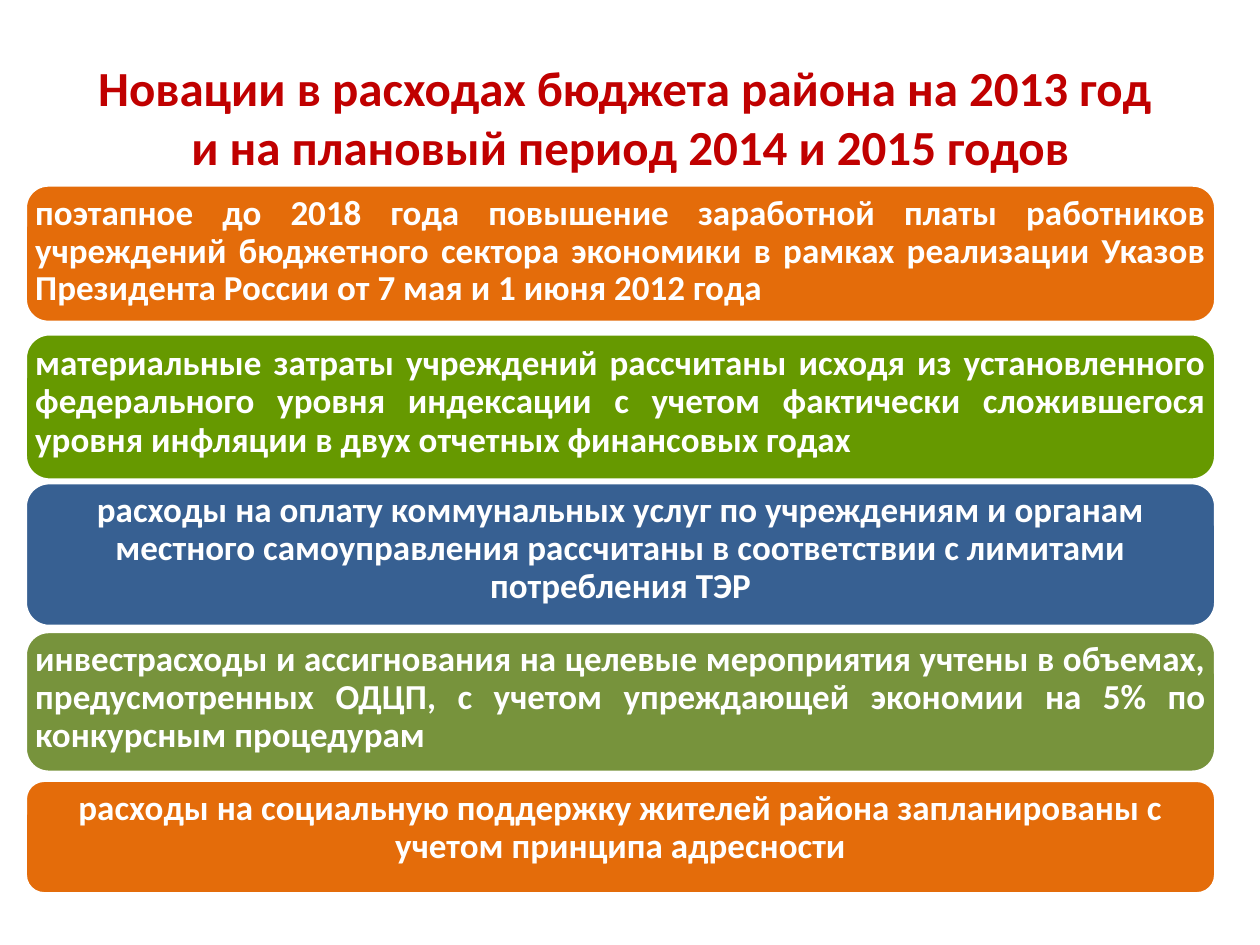
from pptx import Presentation
from pptx.dml.color import RGBColor
from pptx.enum.shapes import MSO_SHAPE as Preset
from pptx.enum.text import MSO_ANCHOR as Anchor, PP_ALIGN as Align
from pptx.util import Cm, Pt

TITLE = "Новации в расходах бюджета района на 2013 год \vи на плановый период 2014 и 2015 годов"

# text, fill, height in cm, alignment, line spacing
INNOVATIONS = [
    ("поэтапное до 2018 года повышение заработной платы работников учреждений "
     "бюджетного сектора экономики в рамках реализации Указов Президента России "
     "от 7 мая и 1 июня 2012 года", "E46C0A", 2.77, Align.JUSTIFY, 0.9),
    ("материальные затраты учреждений рассчитаны исходя из установленного "
     "федерального уровня индексации с учетом фактически сложившегося уровня "
     "инфляции в двух отчетных финансовых годах", "669900", 2.95, Align.JUSTIFY, Pt(22)),
    ("расходы на оплату коммунальных услуг по учреждениям и органам местного "
     "самоуправления рассчитаны в соответствии с лимитами потребления ТЭР",
     "376092", 2.9, Align.CENTER, 0.9),
    ("инвестрасходы и ассигнования на целевые мероприятия учтены в объемах, "
     "предусмотренных ОДЦП, с учетом упреждающей экономии на 5% по конкурсным "
     "процедурам", "77933C", 2.84, Align.JUSTIFY, 0.9),
    ("расходы на социальную поддержку жителей района запланированы с учетом "
     "принципа адресности", "E46C0A", 2.29, Align.CENTER, 0.9),
]
BAR_LEFT, BAR_WIDTH = 0.51, 24
FIRST_TOP, PITCH = 3.73, 3


def color(value):
    return RGBColor.from_string(value)


class BudgetSlide:
    font_name = "Calibri"
    title_color, text_color = "C00000", "FFFFFF"
    padding = 0.2
    corner = 1 / 6  # corner radius as a share of the bar's height

    def __init__(self, presentation):
        self.slide = presentation.slides.add_slide(presentation.slide_layouts[5])

    def style(self, paragraph, size, font_color, align):
        paragraph.alignment = align
        font = paragraph.font
        font.name, font.size, font.bold = self.font_name, Pt(size), True
        font.color.rgb = color(font_color)

    def title(self, text, left, top, width, height):
        heading = self.slide.shapes.title
        heading.left, heading.top = Cm(left), Cm(top)
        heading.width, heading.height = Cm(width), Cm(height)
        frame = heading.text_frame
        frame.text = text
        frame.vertical_anchor = Anchor.MIDDLE
        self.style(frame.paragraphs[0], 28, self.title_color, Align.CENTER)

    def bar(self, text, fill, top, height, align, spacing):
        bar = self.slide.shapes.add_shape(
            Preset.ROUNDED_RECTANGLE, Cm(BAR_LEFT), Cm(top), Cm(BAR_WIDTH), Cm(height))
        bar.adjustments[0] = self.corner
        bar.shadow.inherit = False
        bar.fill.solid()
        bar.fill.fore_color.rgb = color(fill)
        bar.line.color.rgb = color("FFFFFF")
        bar.line.width = Pt(2)

        frame = bar.text_frame
        frame.word_wrap = True
        frame.vertical_anchor = Anchor.TOP
        # A rounded corner already insets the text by 0.29 of its radius
        margin = Cm(self.padding - 0.29 * self.corner * height)
        frame.margin_left = frame.margin_right = margin
        frame.margin_top = frame.margin_bottom = margin
        frame.text = text
        paragraph = frame.paragraphs[0]
        self.style(paragraph, 20, self.text_color, align)
        paragraph.line_spacing = spacing


def main():
    presentation = Presentation()
    presentation.slide_width, presentation.slide_height = Cm(25.4), Cm(19.05)
    budget = BudgetSlide(presentation)
    budget.title(TITLE, 1.27, 0.76, 22.86, 3.18)
    for row, (text, fill, height, align, spacing) in enumerate(INNOVATIONS):
        budget.bar(text, fill, FIRST_TOP + row * PITCH, height, align, spacing)
    presentation.save("out.pptx")


if __name__ == "__main__":
    main()
